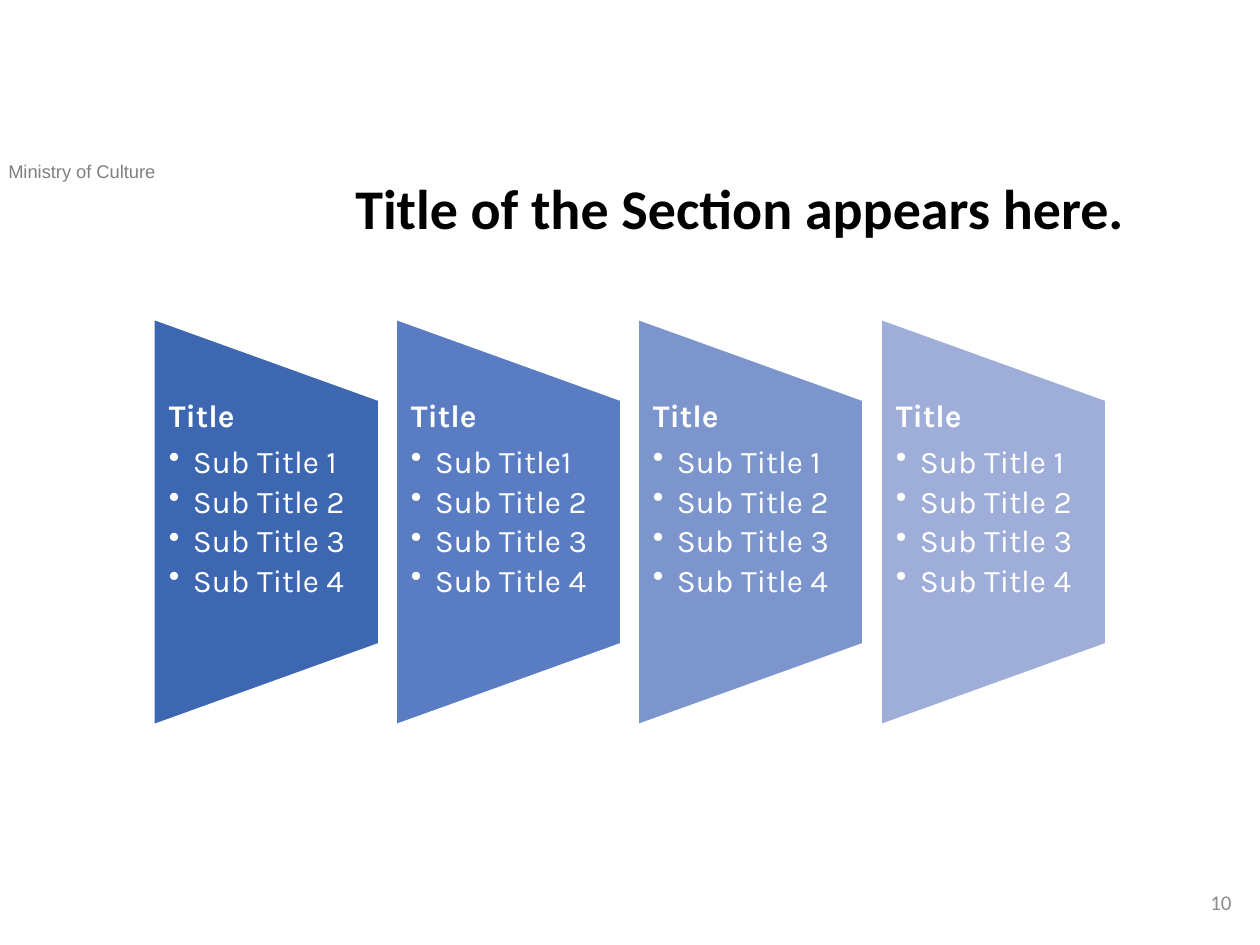
from lxml.etree import SubElement
from pptx import Presentation
from pptx.dml.color import RGBColor
from pptx.enum.shapes import MSO_SHAPE
from pptx.enum.text import MSO_ANCHOR, PP_ALIGN
from pptx.oxml.ns import qn
from pptx.util import Pt

SCALE = 914400 / 126
WHITE = RGBColor(255, 255, 255)
BLACK = RGBColor(0, 0, 0)
GRAY = RGBColor(128, 128, 128)
SILVER = RGBColor(140, 140, 140)
BLUES = [
    RGBColor(0x3E, 0x67, 0xB2),
    RGBColor(0x5A, 0x7C, 0xC3),
    RGBColor(0x7D, 0x95, 0xCD),
    RGBColor(0x9F, 0xAE, 0xD8),
]


def px(length):
    return round(length * SCALE)


def write(para, text, font="Calibri", size=18, color=BLACK, bold=False,
          align=PP_ALIGN.LEFT, line=None, after=0, bullet=False):
    if bullet:
        props = para._p.get_or_add_pPr()
        props.set("marL", str(px(24)))
        props.set("indent", str(px(-24)))
        SubElement(props, qn("a:buChar"), char="•")
    para.alignment = align
    para.line_spacing = line
    para.space_after = Pt(after)
    run = para.add_run()
    run.text = text
    run.font.name = font
    run.font.size = Pt(size)
    run.font.bold = bold
    run.font.color.rgb = color


class Deck:
    font = "Karla"
    size = 18
    ink = WHITE

    def __init__(self):
        self.file = Presentation()
        self.file.slide_width = px(1260)
        self.file.slide_height = px(945)
        self.slide = self.file.slides.add_slide(self.file.slide_layouts[6])

    def frame(self, x, y, w, h):
        box = self.slide.shapes.add_textbox(px(x), px(y), px(w), px(h))
        box.text_frame.word_wrap = True
        return box.text_frame

    def label(self, text, x, y, w, h, anchor=MSO_ANCHOR.TOP, **style):
        frame = self.frame(x, y, w, h)
        frame.vertical_anchor = anchor
        write(frame.paragraphs[0], text, **style)

    def panel(self, x, y, w, h, fill):
        shape = self.slide.shapes.add_shape(
            MSO_SHAPE.FLOWCHART_MANUAL_OPERATION, px(x), px(y), px(w), px(h))
        shape.rotation = 270
        shape.shadow.inherit = False
        shape.fill.solid()
        shape.fill.fore_color.rgb = fill
        shape.line.color.rgb = WHITE
        shape.line.width = Pt(1.5)

    def items(self, title, lines, x, y, w, h):
        frame = self.frame(x, y, w, h)
        frame.margin_left = frame.margin_right = px(15)
        frame.margin_top = frame.margin_bottom = 0
        style = dict(font=self.font, size=self.size, color=self.ink, line=0.9)
        write(frame.paragraphs[0], title, bold=True, after=7, **style)
        for text in lines:
            write(frame.add_paragraph(), text, bullet=True, after=3.2, **style)

    def save(self):
        self.file.save("out.pptx")


def main():
    deck = Deck()
    deck.label("Ministry of Culture", -4, 154, 275, 35,
               font="Arial", size=10.5, color=GRAY)
    deck.label("10", 960, 877, 284, 50, anchor=MSO_ANCHOR.MIDDLE,
               size=12, color=SILVER, align=PP_ALIGN.RIGHT)
    rest = [f"Sub Title {n}" for n in (2, 3, 4)]
    firsts = ["Sub Title 1", "Sub Title1", "Sub Title 1", "Sub Title 1"]
    for i, (fill, first) in enumerate(zip(BLUES, firsts)):
        left = 63 + 727 * i // 3
        deck.panel(left, 409, 407, 226, fill)
        deck.items("Title", [first] + rest, left + 91, 400, 226, 244)
    deck.label("Title of the Section appears here.", 333, 175, 814, 100,
               size=32, bold=True, align=PP_ALIGN.CENTER, line=0.9)
    deck.save()


if __name__ == "__main__":
    main()
